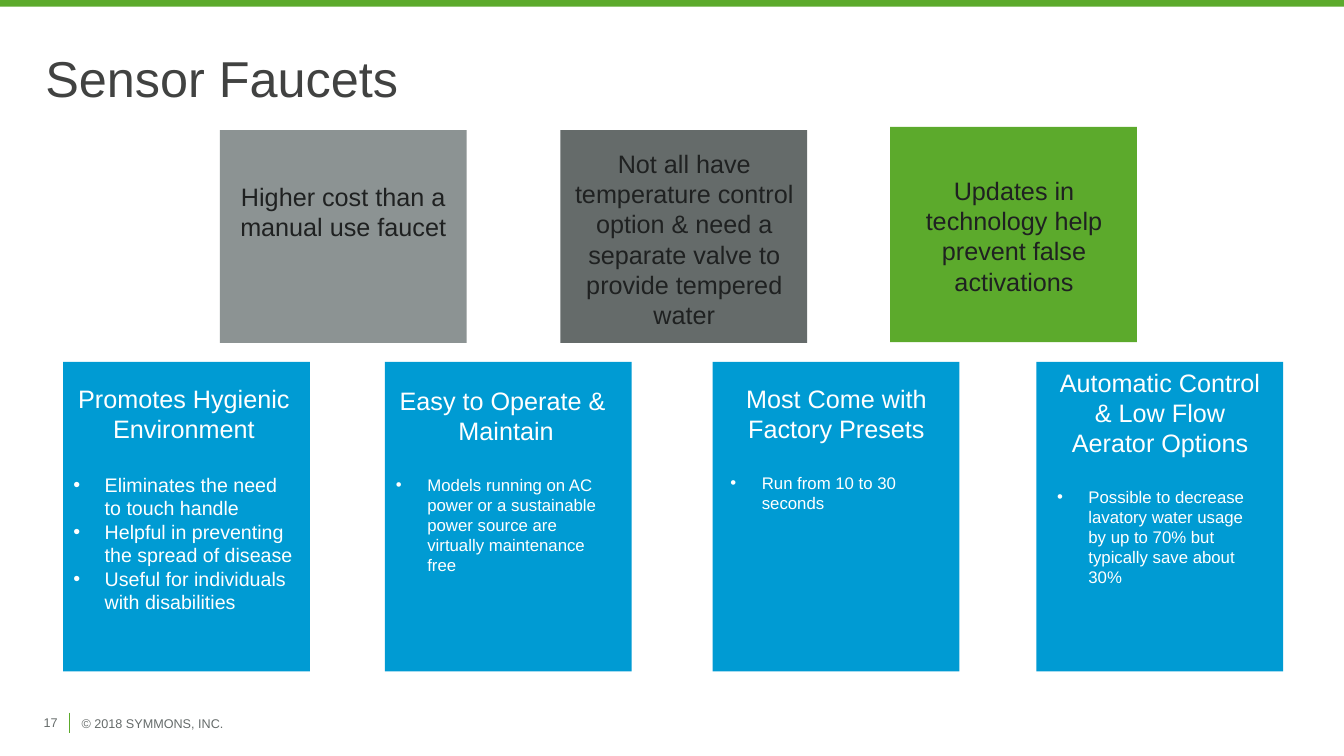
import pptx
import pptx.util
import pptx.dml.color
import pptx.enum.shapes
import pptx.enum.text
import pptx.oxml.ns
import lxml.etree

Cm, Pt = pptx.util.Cm, pptx.util.Pt
ALIGN = pptx.enum.text.PP_ALIGN
MID = pptx.enum.text.MSO_ANCHOR.MIDDLE

INK = {"green": "5CAA2C", "silver": "8C9393", "grey": "656B6A", "blue": "009BD3",
       "title": "414241", "dark": "1F2121", "white": "FFFFFF"}
FONT = "Arial"
TITLE = "Sensor Faucets"
PAGE = "17"
RIGHTS = "© 2018 SYMMONS, INC."

# Card: left, top, height, fill; text: left, top, width, height
CARD_W = 6.22
LIMITS = [
    ((5.54, 3.28, 5.36, "silver"), (5.79, 4.45, 5.72, 1.8),
     "Higher cost than a manual use faucet"),
    ((14.12, 3.28, 5.36, "grey"), (13.84, 3.61, 6.81, 4.88),
     "Not all have temperature control option & need a separate valve "
     "to provide tempered water"),
    ((22.43, 3.2, 5.42, "green"), (22.48, 4.29, 6.15, 3.33),
     "Updates in technology help prevent false activations"),
]
# Left of card, text box, heading lines, bullet size, bullets
PERK_TOP, PERK_H = 9.12, 7.8
PERKS = [
    (1.59, (1.6, 9.53, 6.07, 6.15), ["Promotes Hygienic Environment"], 14,
     ["Eliminates the need to touch handle",
      "Helpful in preventing the spread of disease",
      "Useful for individuals with disabilities"]),
    (9.7, (9.73, 9.58, 6.05, 5.13), ["Easy to Operate & ", "Maintain"], 12,
     ["Models running on AC power or a sustainable power source are "
      "virtually maintenance free"]),
    (17.96, (18.16, 9.53, 5.84, 3.58), ["Most Come with Factory Presets"], 12,
     ["Run from 10 to 30 seconds"]),
    (26.12, (26.39, 9.12, 5.69, 5.89),
     ["Automatic Control & Low Flow Aerator Options"], 12,
     ["Possible to decrease lavatory water usage by up to 70% but "
      "typically save about 30%"]),
]
HEAD_SIZE = 18
GAP = 20.7
INDENT = 0.79


def tint(name):
    return pptx.dml.color.RGBColor.from_string(INK[name])


def write(para, text, size, ink, align=ALIGN.LEFT):
    para.alignment = align
    run = para.add_run()
    run.text = text
    run.font.name = FONT
    run.font.size = Pt(size)
    run.font.color.rgb = tint(ink)


def block(slide, left, top, width, height, fill):
    rect = slide.shapes.add_shape(pptx.enum.shapes.MSO_SHAPE.RECTANGLE,
                                  Cm(left), Cm(top), Cm(width), Cm(height))
    rect.shadow.inherit = False
    rect.fill.solid()
    rect.fill.fore_color.rgb = tint(fill)
    rect.line.fill.background()


def frame(slide, box):
    """Add a wrapping text box and return its text frame."""
    text = slide.shapes.add_textbox(*map(Cm, box)).text_frame
    text.word_wrap = True
    return text


def bullet(para):
    props = para._p.get_or_add_pPr()
    props.set("marL", str(Cm(INDENT)))
    props.set("indent", str(-Cm(INDENT)))
    for tag, attrs in (("a:buFont", {"typeface": FONT}), ("a:buChar", {"char": "•"})):
        lxml.etree.SubElement(props, pptx.oxml.ns.qn(tag), attrs)


def add_title(slide):
    title = slide.shapes.title
    title.left, title.top, title.width, title.height = map(Cm, (0.89, 0.79, 32, 2.49))
    text = title.text_frame
    text.word_wrap = True
    text.vertical_anchor = MID
    para = text.paragraphs[0]
    para.line_spacing = 0.9
    write(para, TITLE, 36, "title")


def add_perk(slide, box, heads, size, points):
    text = frame(slide, box)
    for i, head in enumerate(heads):
        para = text.add_paragraph() if i else text.paragraphs[0]
        write(para, head, HEAD_SIZE, "white", ALIGN.CENTER)
    for i, point in enumerate(points):
        para = text.add_paragraph()
        if i == 0:
            para.space_before = Pt(GAP)
        bullet(para)
        write(para, point, size, "white")


def add_footer(slide):
    rights = frame(slide, (2.06, 18.03, 5.97, 0.43))
    rights.margin_left = rights.margin_right = 0
    rights.margin_top = rights.margin_bottom = 0
    page = frame(slide, (0.69, 17.75, 1.17, 0.97))
    for text, words, align in ((rights, RIGHTS, ALIGN.LEFT), (page, PAGE, ALIGN.CENTER)):
        text.vertical_anchor = MID
        para = text.paragraphs[0]
        para.line_spacing = 0.9
        write(para, words, 9, "grey", align)
    rule = slide.shapes.add_connector(pptx.enum.shapes.MSO_CONNECTOR.STRAIGHT,
                                      Cm(1.75), Cm(17.96), Cm(1.75), Cm(18.47))
    rule.line.color.rgb = tint("green")
    rule.line.width = Pt(0.5)
    lxml.etree.SubElement(rule._element.spPr, pptx.oxml.ns.qn("a:effectLst"))


def main():
    deck = pptx.Presentation()
    deck.slide_width, deck.slide_height = Cm(33.87), Cm(19.05)
    slide = deck.slides.add_slide(deck.slide_layouts[5])
    add_footer(slide)
    block(slide, 0, -0.05, 33.87, 0.22, "green")
    add_title(slide)
    for (left, top, height, fill), box, words in LIMITS:
        block(slide, left, top, CARD_W, height, fill)
        write(frame(slide, box).paragraphs[0], words, HEAD_SIZE, "dark", ALIGN.CENTER)
    for left, box, heads, size, points in PERKS:
        block(slide, left, PERK_TOP, CARD_W, PERK_H, "blue")
        add_perk(slide, box, heads, size, points)
    deck.save("out.pptx")


if __name__ == "__main__":
    main()
